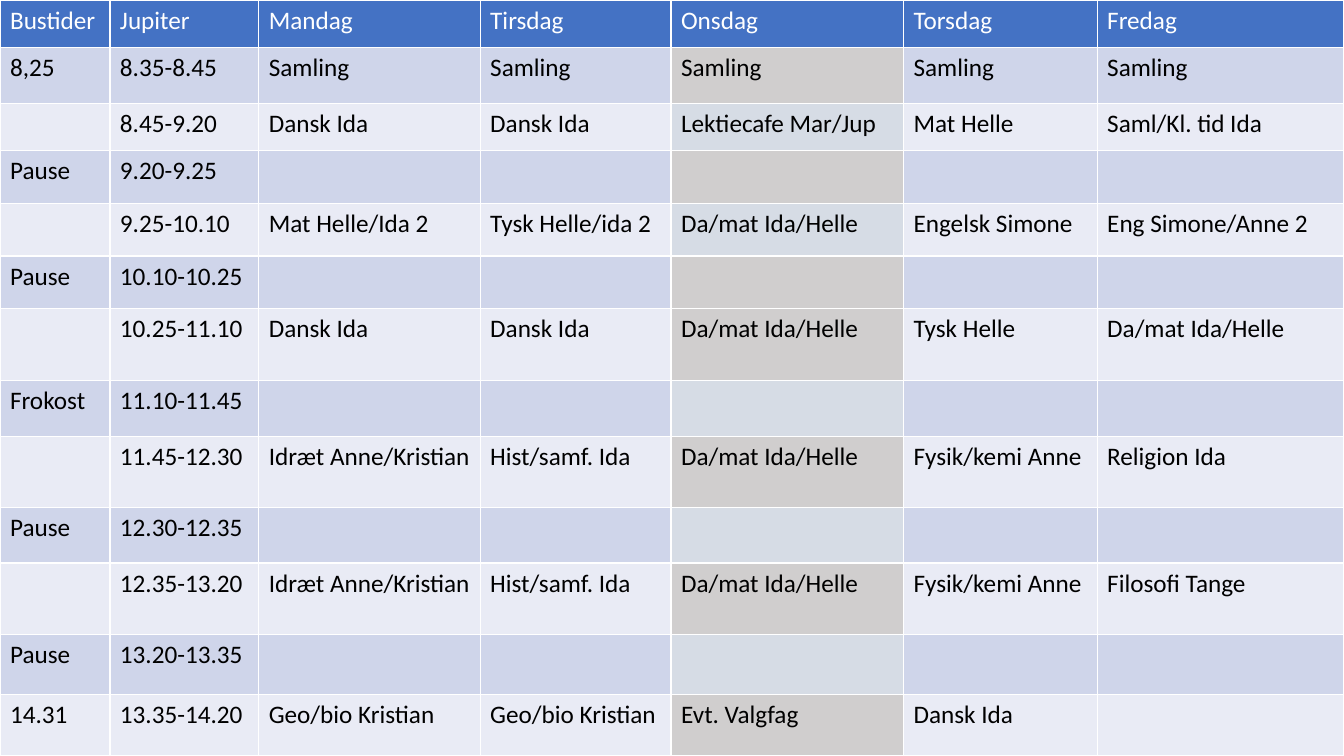
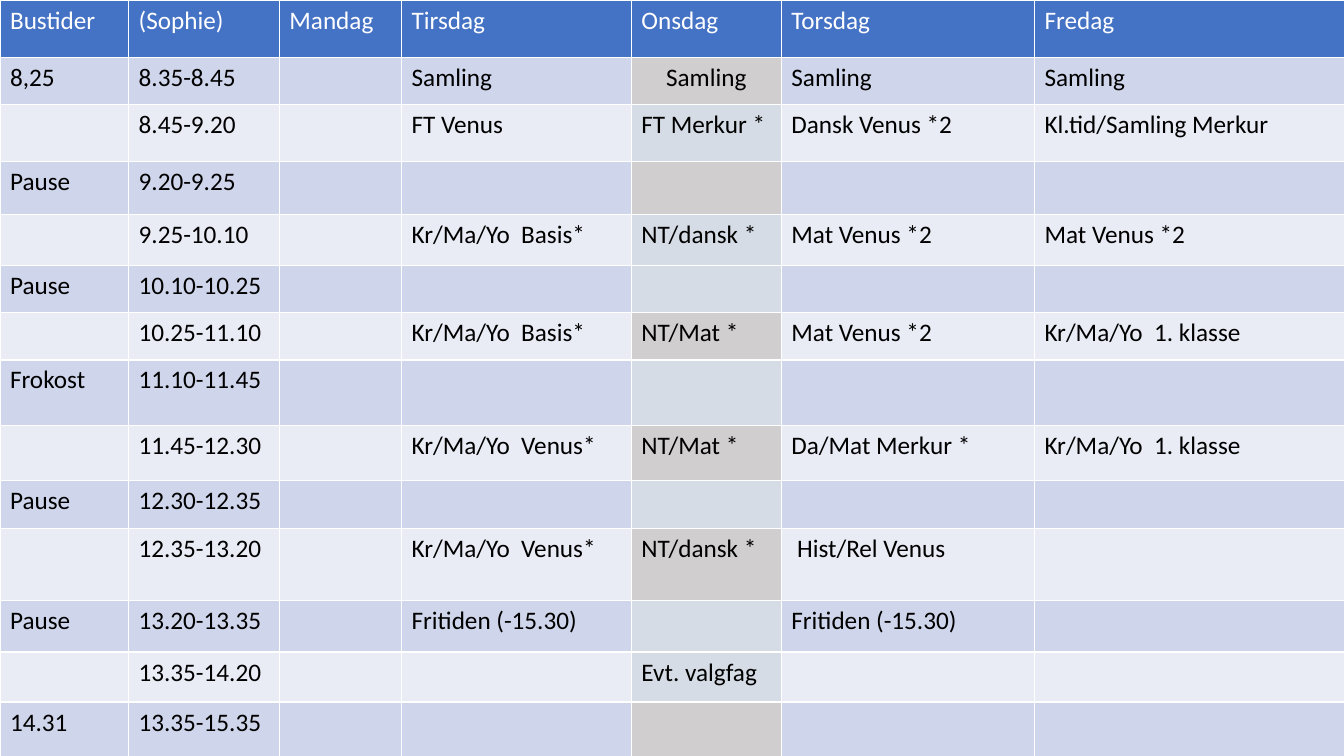
from dataclasses import dataclass

from pptx import Presentation
from pptx.dml.color import RGBColor as Rgb
from pptx.enum.text import PP_ALIGN as Align
from pptx.util import Cm, Pt

COLORS = {
    "header": "4472C4",
    "header_text": "FFFFFF",
    "text": "000000",
    "odd_row": "CFD5EA",
    "even_row": "E9EBF5",
    "grey": "D0CECE",
    "blue": "D6DCE5",
}
ONSDAG_TINTS = {"G": "grey", "B": "blue"}
DAYS = ("Mandag", "Tirsdag", "Onsdag", "Torsdag", "Fredag")
ONSDAG = 2 + DAYS.index("Onsdag")
FREE = ("",) * len(DAYS)

SHARED_TIMES = [
    ("8,25", "8.35-8.45"),
    ("", "8.45-9.20"),
    ("Pause", "9.20-9.25"),
    ("", "9.25-10.10"),
    ("Pause", "10.10-10.25"),
    ("", "10.25-11.10"),
    ("Frokost", "11.10-11.45"),
    ("", "11.45-12.30"),
    ("Pause", "12.30-12.35"),
    ("", "12.35-13.20"),
    ("Pause", "13.20-13.35"),
]


@dataclass
class Timetable:
    """One weekly timetable; lengths are in centimetres."""

    owner: str
    widths: list
    heights: list
    last_times: list
    lessons: list
    onsdag_tints: str
    centred: tuple = ()

    def rows(self):
        """Return the header and the lesson rows as tuples of texts."""
        times = SHARED_TIMES + self.last_times
        body = [time + lesson for time, lesson in zip(times, self.lessons)]
        return [("Bustider", self.owner) + DAYS] + body


JUPITER = Timetable(
    owner="Jupiter",
    widths=[2.77, 3.75, 5.58, 4.81, 5.86, 4.88, 6.21],
    heights=[1.19, 1.41, 1.19, 1.33, 1.33, 1.33, 1.8, 1.41, 1.8, 1.4, 1.8, 1.52, 1.54],
    last_times=[("14.31", "13.35-14.20")],
    lessons=[
        ("Samling",) * len(DAYS),
        ("Dansk Ida", "Dansk Ida", "Lektiecafe Mar/Jup", "Mat Helle", "Saml/Kl. tid Ida"),
        FREE,
        ("Mat Helle/Ida 2", "Tysk Helle/ida 2", "Da/mat Ida/Helle", "Engelsk Simone", "Eng Simone/Anne 2"),
        FREE,
        ("Dansk Ida", "Dansk Ida", "Da/mat Ida/Helle", "Tysk Helle", "Da/mat Ida/Helle"),
        FREE,
        ("Idræt Anne/Kristian", "Hist/samf. Ida", "Da/mat Ida/Helle", "Fysik/kemi Anne", "Religion Ida"),
        FREE,
        ("Idræt Anne/Kristian", "Hist/samf. Ida", "Da/mat Ida/Helle", "Fysik/kemi Anne", "Filosofi Tange"),
        FREE,
        ("Geo/bio Kristian", "Geo/bio Kristian", "Evt. Valgfag", "Dansk Ida", ""),
    ],
    onsdag_tints="GBGBGGBGBGBG",
)

SOPHIE = Timetable(
    owner="(Sophie)",
    widths=[3.24, 3.8, 3.08, 5.79, 3.78, 6.38, 7.84],
    heights=[1.44, 1.19, 1.43, 1.35, 1.28, 1.19, 1.19, 1.66, 1.37, 1.22, 1.81, 1.3, 1.26, 1.68],
    last_times=[("", "13.35-14.20"), ("14.31", "13.35-15.35")],
    lessons=[
        ("", "Samling", "Samling", "Samling", "Samling"),
        ("", "FT Venus", "FT Merkur *", "Dansk Venus *2", "Kl.tid/Samling Merkur"),
        FREE,
        ("", "Kr/Ma/Yo  Basis*", "NT/dansk *", "Mat Venus *2", "Mat Venus *2"),
        FREE,
        ("", "Kr/Ma/Yo  Basis*", "NT/Mat *", "Mat Venus *2", "Kr/Ma/Yo  1. klasse"),
        FREE,
        ("", "Kr/Ma/Yo  Venus*", "NT/Mat *", "Da/Mat Merkur *", "Kr/Ma/Yo  1. klasse"),
        FREE,
        ("", "Kr/Ma/Yo  Venus*", "NT/dansk *", " Hist/Rel Venus", ""),
        ("", "Fritiden (-15.30)", "", "Fritiden (-15.30)", ""),
        ("", "", "Evt. valgfag", "", ""),
        FREE,
    ],
    onsdag_tints="GBGBBGBGBGBBG",
    centred=((1, ONSDAG),),
)


def cell_color(timetable, row, column):
    """Return the colour name of a cell's fill."""
    if row == 0:
        return "header"
    if column == ONSDAG:
        return ONSDAG_TINTS[timetable.onsdag_tints[row - 1]]
    return "odd_row" if row % 2 else "even_row"


def write_cell(cell, text, fill, text_color):
    """Fill a cell and write its text."""
    cell.fill.solid()
    cell.fill.fore_color.rgb = Rgb.from_string(COLORS[fill])
    line = cell.text_frame.paragraphs[0]
    line.font.name = "Calibri"
    line.font.size = Pt(18)
    line.font.color.rgb = Rgb.from_string(COLORS[text_color])
    if text:
        run = line.add_run()
        run.text = text
        run.font.bold = False


def add_timetable(slide, timetable, left, top):
    """Place a timetable with its upper left corner at the given point."""
    rows = timetable.rows()
    grid = slide.shapes.add_table(
        len(rows), len(timetable.widths), left, top,
        Cm(sum(timetable.widths)), Cm(sum(timetable.heights)),
    ).table
    for column, width in zip(grid.columns, timetable.widths):
        column.width = Cm(width)
    for grid_row, height in zip(grid.rows, timetable.heights):
        grid_row.height = Cm(height)
    for r, texts in enumerate(rows):
        text_color = "text" if r else "header_text"
        for c, text in enumerate(texts):
            write_cell(grid.cell(r, c), text, cell_color(timetable, r, c), text_color)
    for r, c in timetable.centred:
        grid.cell(r, c).text_frame.paragraphs[0].alignment = Align.CENTER


def main():
    """Build and save the timetables."""
    deck = Presentation()
    deck.slide_width, deck.slide_height = Cm(33.87), Cm(19.05)
    blank = deck.slide_layouts[6]
    for timetable in (JUPITER, SOPHIE):
        add_timetable(deck.slides.add_slide(blank), timetable, Cm(0), Cm(0))
    deck.save("out.pptx")


if __name__ == "__main__":
    main()
